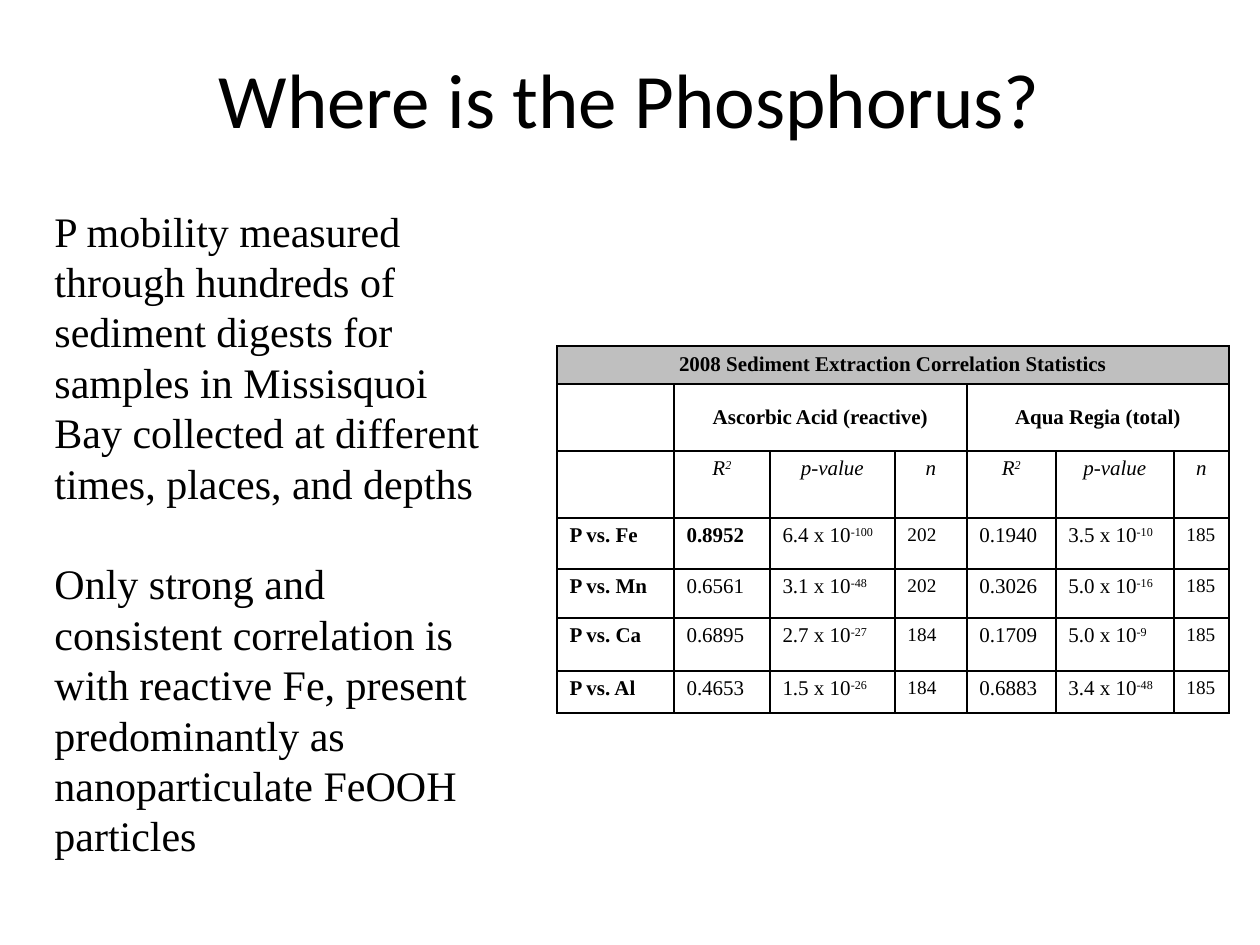
from lxml import etree
from pptx import Presentation
from pptx.dml.color import RGBColor
from pptx.enum.text import MSO_ANCHOR, PP_ALIGN
from pptx.oxml.ns import qn
from pptx.util import Emu, Pt

PX = 914400 // 126
CENTER, LEFT = PP_ALIGN.CENTER, PP_ALIGN.LEFT
TOP, MIDDLE = MSO_ANCHOR.TOP, MSO_ANCHOR.MIDDLE
COLORS = {"ink": "000000", "paper": "FFFFFF", "band": "BFBFBF"}
SANS, SERIF = "Calibri", "Times New Roman"

COL_WIDTHS = [117, 96, 125, 72, 89, 118, 55]
ROW_HEIGHTS = [38, 67, 67, 51, 49, 53, 42]
STATS = [
    ("P vs. Fe", "0.8952", "6.4 x 10^-100", "202", "0.1940", "3.5 x 10^-10", "185"),
    ("P vs. Mn", "0.6561", "3.1 x 10^-48", "202", "0.3026", "5.0 x 10^-16", "185"),
    ("P vs. Ca", "0.6895", "2.7 x 10^-27", "184", "0.1709", "5.0 x 10^-9", "185"),
    ("P vs. Al", "0.4653", "1.5 x 10^-26", "184", "0.6883", "3.4 x 10^-48", "185"),
]
BODY = [
    "P mobility measured through hundreds of sediment digests for samples in "
    "Missisquoi Bay collected at different times, places, and depths",
    "Only strong and consistent correlation is with reactive Fe, present "
    "predominantly as nanoparticulate FeOOH particles",
]


def px(n):
    return Emu(n * PX)


def rgb(name):
    return RGBColor.from_string(COLORS[name])


def add_run(p, text, size, name=SERIF, **fmt):
    r = p.add_run()
    r.text = text
    r.font.color.rgb = rgb("ink")
    for key, value in {"size": Pt(size), "name": name, **fmt}.items():
        setattr(r.font, key, value)
    return r


def add_textbox(s, box):
    tf = s.shapes.add_textbox(*map(px, box)).text_frame
    tf.word_wrap = True
    return tf


def add_title(s, box):
    tf = add_textbox(s, box)
    tf.vertical_anchor = MIDDLE
    p = tf.paragraphs[0]
    p.alignment = CENTER
    add_run(p, "Where is the Phosphorus?", 44, SANS)


def add_body(s, box):
    tf = add_textbox(s, box)
    line = Pt(28.8)
    for i, text in enumerate(BODY):
        p = tf.add_paragraph() if i else tf.paragraphs[0]
        p.line_spacing = line
        p.space_before = line if i else Pt(0)
        add_run(p, text, 24)


def style_cell(cell, fill):
    """Give the cell 1 pt borders on all sides, then its fill."""
    tc_pr = cell._tc.get_or_add_tcPr()
    for side in ("lnL", "lnR", "lnT", "lnB"):
        ln = etree.SubElement(tc_pr, qn("a:" + side), w=str(Pt(1)))
        solid = etree.SubElement(ln, qn("a:solidFill"))
        etree.SubElement(solid, qn("a:srgbClr"), val=COLORS["ink"])
    cell.fill.solid()
    cell.fill.fore_color.rgb = rgb(fill)


def write_cell(cell, text, align=LEFT, anchor=TOP, size=12, **fmt):
    """Write text; what follows a ^ is set as superscript."""
    cell.vertical_anchor = anchor
    p = cell.text_frame.paragraphs[0]
    p.alignment = align
    base, _, power = text.partition("^")
    add_run(p, base, size, **fmt)
    if power:
        r = add_run(p, power, size, **fmt)
        r._r.get_or_add_rPr().set("baseline", "30000")


def add_stats_table(s, left, top):
    box = (left, top, sum(COL_WIDTHS), sum(ROW_HEIGHTS))
    table = s.shapes.add_table(len(ROW_HEIGHTS), len(COL_WIDTHS), *map(px, box)).table
    for col, width in zip(table.columns, COL_WIDTHS):
        col.width = px(width)
    for i, (row, height) in enumerate(zip(table.rows, ROW_HEIGHTS)):
        row.height = px(height)
        for cell in row.cells:
            style_cell(cell, "paper" if i else "band")

    table.cell(0, 0).merge(table.cell(0, 6))
    write_cell(table.cell(0, 0), "2008 Sediment Extraction Correlation Statistics",
               CENTER, bold=True)
    for c, digest in ((1, "Ascorbic Acid (reactive)"), (4, "Aqua Regia (total)")):
        table.cell(1, c).merge(table.cell(1, c + 2))
        write_cell(table.cell(1, c), digest, CENTER, MIDDLE, bold=True)
        for k, label in enumerate(("R^2", "p-value", "n")):
            write_cell(table.cell(2, c + k), label, CENTER, italic=True)
    for i, values in enumerate(STATS):
        for c, value in enumerate(values):
            write_cell(table.cell(3 + i, c), value, size=11 if c in (3, 6) else 12,
                       bold=c == 0 or value == "0.8952")


def main():
    prs = Presentation()
    prs.slide_width, prs.slide_height = px(1260), px(945)
    s = prs.slides.add_slide(prs.slide_layouts[6])
    add_title(s, (63, 38, 1134, 120))
    add_stats_table(s, 557, 346)
    add_body(s, (42, 199, 472, 667))
    prs.save("out.pptx")


if __name__ == "__main__":
    main()
